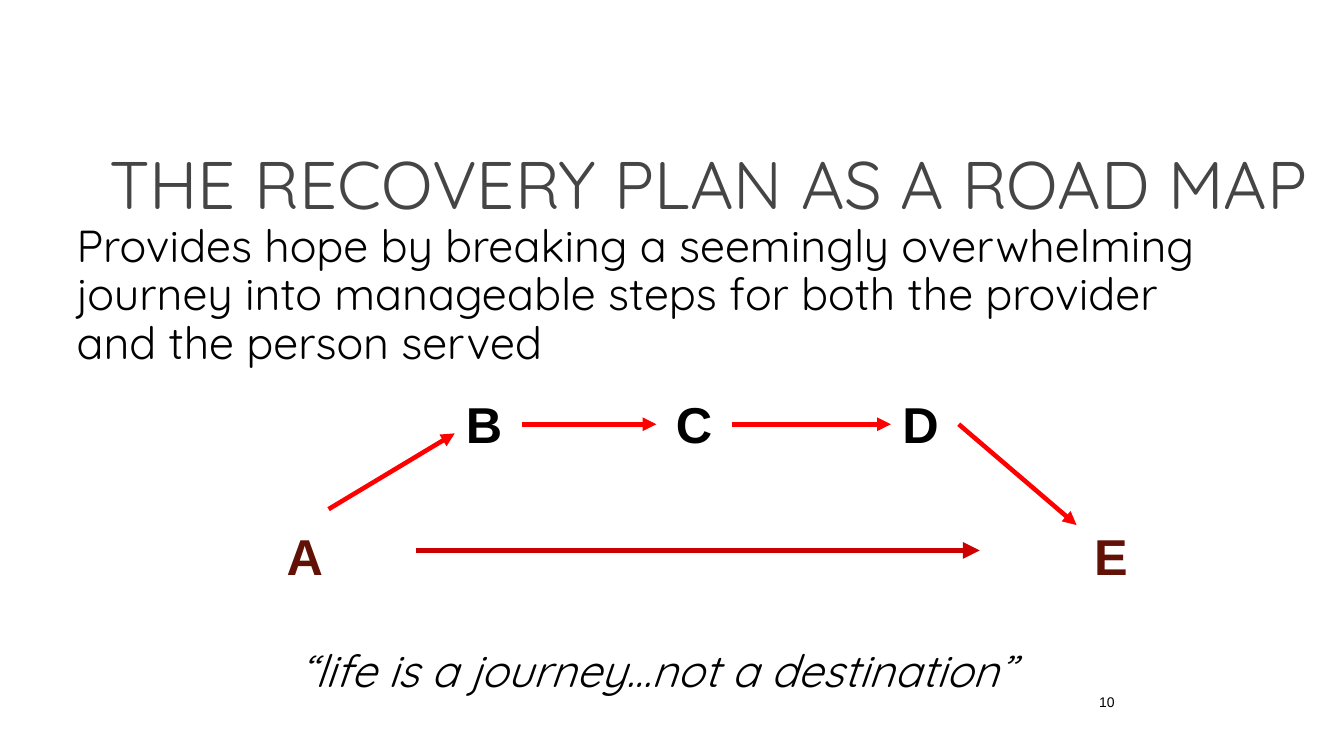
from pptx import Presentation
from pptx.dml.color import RGBColor
from pptx.enum.shapes import MSO_CONNECTOR
from pptx.enum.text import MSO_ANCHOR, PP_ALIGN
from pptx.oxml.ns import qn
from pptx.util import Cm, Pt
from lxml.etree import SubElement

COLORS = {
    "title": "454545",
    "text": "000000",
    "endpoint": "621107",
    "step": "FF0000",
    "direct": "CC0000",
}
HEAD_FONT, LABEL_FONT = "Quicksand", "Arial"
STOP_W, STOP_H = 1.9, 1.78
UPPER_Y, LOWER_Y = 9.78, 13.11


def style(p, size, color, font, align=PP_ALIGN.LEFT, bold=False, italic=False):
    p.alignment = align
    p.font.name = font
    p.font.size = Pt(size)
    p.font.bold = bold
    p.font.italic = italic
    p.font.color.rgb = RGBColor.from_string(COLORS[color])


def add_title(s, text):
    sp = s.shapes.title
    sp.left, sp.top, sp.width, sp.height = Cm(1.68), Cm(3.05), Cm(31.52), Cm(3.38)
    tf = sp.text_frame
    tf.text = text
    tf.vertical_anchor = MSO_ANCHOR.MIDDLE
    p = tf.paragraphs[0]
    p.line_spacing = 0.9
    style(p, 48, "title", HEAD_FONT, PP_ALIGN.RIGHT)


def add_text(s, text, left, top, width, height, size, color="text",
             font=HEAD_FONT, line_spacing=None, **options):
    sp = s.shapes.add_textbox(Cm(left), Cm(top), Cm(width), Cm(height))
    tf = sp.text_frame
    tf.word_wrap = True
    p = tf.paragraphs[0]
    p.text = text
    p.line_spacing = line_spacing
    style(p, size, color, font, **options)


def add_stop(s, letter, center, top, color):
    add_text(s, letter, center - STOP_W / 2, top, STOP_W, STOP_H, 36, color,
             LABEL_FONT, align=PP_ALIGN.CENTER, bold=True)


def add_arrow(s, x1, y1, x2, y2, color="step", width=3.25):
    c = s.shapes.add_connector(MSO_CONNECTOR.STRAIGHT,
                               Cm(x1), Cm(y1), Cm(x2), Cm(y2))
    c.line.color.rgb = RGBColor.from_string(COLORS[color])
    c.line.width = Pt(width)
    SubElement(c.line._get_or_add_ln(), qn("a:tailEnd"), type="triangle")
    SubElement(c._element.spPr, qn("a:effectLst"))


def main():
    prs = Presentation()
    prs.slide_width, prs.slide_height = Cm(33.87), Cm(19.05)
    s = prs.slides.add_slide(prs.slide_layouts[5])

    # Title and statement
    add_title(s, "THE RECOVERY PLAN AS A ROAD MAP")
    add_text(s, "Provides hope by breaking a seemingly overwhelming journey into "
             "manageable steps for both the provider and the person served",
             1.68, 5.51, 28.8, 4.95, 32, line_spacing=0.9)

    # Stops on the road
    for letter, center, top, color in [
        ("A", 7.68, LOWER_Y, "endpoint"),
        ("B", 12.2, UPPER_Y, "text"),
        ("C", 17.49, UPPER_Y, "text"),
        ("D", 23.2, UPPER_Y, "text"),
        ("E", 28, LOWER_Y, "endpoint"),
    ]:
        add_stop(s, letter, center, top, color)

    # Direct route, then step by step
    add_arrow(s, 10.49, 13.87, 24.69, 13.87, "direct", 4)
    for ends in [
        (8.28, 12.83, 11.46, 10.92),
        (13.16, 10.69, 16.54, 10.69),
        (18.44, 10.69, 22.45, 10.69),
        (24.16, 10.69, 27.13, 13.23),
    ]:
        add_arrow(s, *ends)

    # Closing quote and page number
    add_text(s, "“life is a journey…not a destination”", 5.99, 16.08, 21.13, 1.63,
             32, align=PP_ALIGN.CENTER, italic=True)
    add_text(s, "10", 23.06, 17.35, 5.28, 1.27, 10, font=LABEL_FONT,
             align=PP_ALIGN.RIGHT)

    prs.save("out.pptx")


if __name__ == "__main__":
    main()
